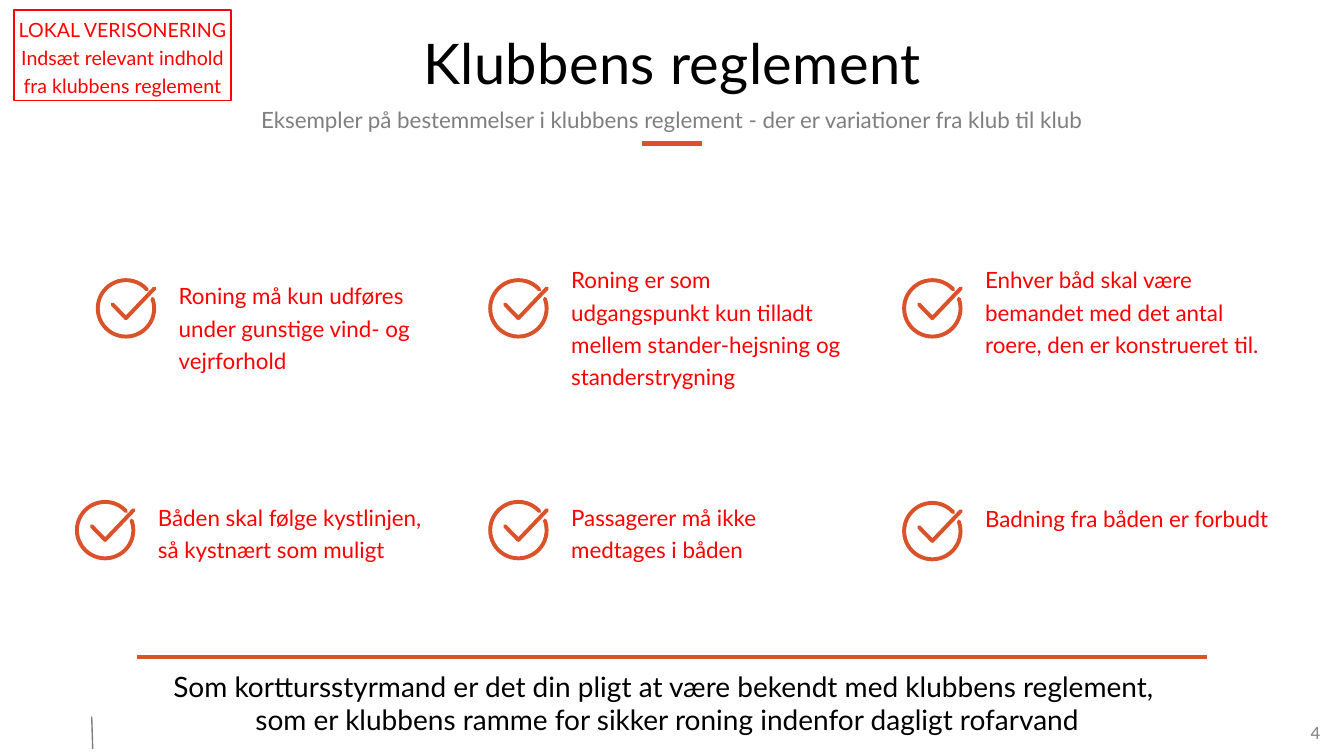
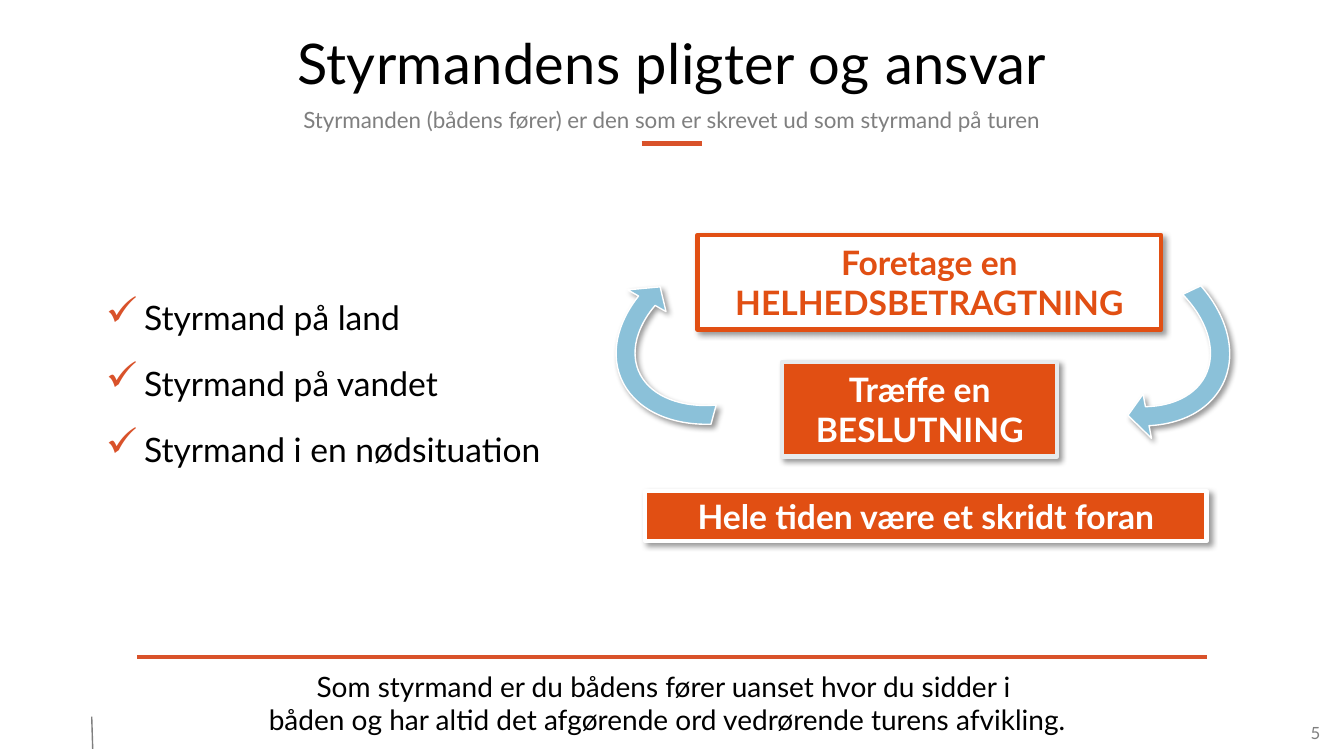
from dataclasses import dataclass
from typing import Optional, Sequence

from lxml.etree import SubElement
from pptx import Presentation
from pptx.dml.color import RGBColor
from pptx.enum.shapes import MSO_CONNECTOR, MSO_SHAPE
from pptx.enum.text import MSO_ANCHOR as Anchor, PP_ALIGN as Align
from pptx.oxml.ns import qn
from pptx.util import Emu, Inches, Pt

COLUMNS, ROWS = 40, 22.5
CELL = Inches(13.333) / COLUMNS


@dataclass(frozen=True)
class Theme:
    font: str = "Lato"
    black: str = "000000"
    white: str = "FFFFFF"
    gray: str = "7F7F7F"
    red: str = "FF0000"
    accent: str = "D9522A"
    orange: str = "E14F13"
    pale: str = "E7EBED"
    blue: str = "8BC1D9"
    title: int = 40
    large: int = 24
    closing: int = 20
    body: int = 16
    note: int = 14
    number: int = 12


THEME = Theme()


@dataclass(frozen=True)
class Area:
    """A rectangle in grid columns and rows."""
    left: float
    top: float
    width: float
    height: float

    def emu(self) -> tuple:
        return tuple(cells(v) for v in (self.left, self.top, self.width, self.height))


@dataclass(frozen=True)
class Style:
    size: int
    color: str
    bold: bool = False
    align: Align = Align.LEFT
    line_spacing: Optional[float] = None
    tracking: Optional[int] = None
    before: int = 0
    bullet: Optional[str] = None


@dataclass(frozen=True)
class Rule:
    left: float
    top: float
    text_top: float
    text: str


@dataclass(frozen=True)
class Panel:
    area: Area
    fill: str
    border: str
    color: str
    lines: tuple


@dataclass(frozen=True)
class Arrow:
    area: Area
    rotation: float
    head: float
    tail: float


TITLE = Style(THEME.title, THEME.black, align=Align.CENTER, line_spacing=0.9, tracking=30)
SUBTITLE = Style(THEME.body, THEME.gray, align=Align.CENTER, line_spacing=1.4)
CLOSING = Style(THEME.closing, THEME.black, align=Align.CENTER)
NUMBER = Style(THEME.number, THEME.gray, align=Align.RIGHT)
NOTE = Style(THEME.note, THEME.red, align=Align.CENTER, line_spacing=1.2)
RULE = Style(THEME.body, THEME.red, line_spacing=1.2)
DUTY = Style(THEME.large, THEME.black, before=18, bullet="✓")

ICON_RADIUS = 0.84
ICON_CENTER = 0.87
ICON_WEIGHT = 2.8
ARC_DEGREE = 0.6
TEXT_OFFSET = 2.44
TEXT_WIDTH = 8.43
LEFT, MIDDLE, RIGHT = 2.88, 14.56, 26.88
UPPER, LOWER = 8.31, 14.91

RULES = (
    Rule(LEFT, UPPER, 8.25, "Roning må kun udføres under gunstige vind- og vejrforhold"),
    Rule(MIDDLE, UPPER, 7.77, "Roning er som udgangspunkt kun tilladt mellem "
         "stander-hejsning og standerstrygning"),
    Rule(RIGHT, UPPER, 7.77, "Enhver båd skal være bemandet med det antal roere, "
         "den er konstrueret til."),
    Rule(2.26, LOWER, 14.85, "Båden skal følge kystlinjen, så kystnært som muligt"),
    Rule(MIDDLE, LOWER, 14.85, "Passagerer må ikke medtages i båden"),
    Rule(RIGHT, LOWER + 0.03, 14.88, "Badning fra båden er forbudt"),
)
DUTIES = ("Styrmand på land", "Styrmand på vandet", "Styrmand i en nødsituation")
PANELS = (
    Panel(Area(20.76, 6.99, 13.8, 2.82), THEME.white, THEME.orange, THEME.orange,
          ("Foretage en", "HELHEDSBETRAGTNING")),
    Panel(Area(23.28, 10.77, 8.19, 2.82), THEME.orange, THEME.pale, THEME.white,
          ("Træffe en", "BESLUTNING")),
    Panel(Area(19.2, 14.61, 16.71, 1.5), THEME.orange, THEME.white, THEME.white,
          ("Hele tiden være et skridt foran",)),
)
ARROWS = (
    Arrow(Area(18.93, 5.73, 5.97, 8.19), 67.3, 78.5, 22.65),
    Arrow(Area(30.03, 5.67, 6.09, 8.19), 117, 186.5, 130.65),
)


def cells(value: float) -> Emu:
    return Emu(round(value * CELL))


def rgb(color: str) -> RGBColor:
    return RGBColor.from_string(color)


def add_bullet(para, mark: str) -> None:
    props = para._p.get_or_add_pPr()
    indent = Inches(0.38)
    props.set("marL", str(indent))
    props.set("indent", str(-indent))
    SubElement(SubElement(props, qn("a:buClr")), qn("a:srgbClr")).set("val", THEME.accent)
    SubElement(props, qn("a:buSzPct")).set("val", "120000")
    SubElement(props, qn("a:buChar")).set("char", mark)


def write(frame, lines: Sequence[str], style: Style) -> None:
    frame.word_wrap = True
    for index, line in enumerate(lines):
        para = frame.add_paragraph() if index else frame.paragraphs[0]
        if style.bullet:
            add_bullet(para, style.bullet)
        para.alignment = style.align
        if style.line_spacing:
            para.line_spacing = style.line_spacing
        if index and style.before:
            para.space_before = Pt(style.before)
        span = para.add_run()
        span.text = line
        span.font.name = THEME.font
        span.font.size = Pt(style.size)
        span.font.bold = style.bold
        span.font.color.rgb = rgb(style.color)
        if style.tracking:
            span._r.get_or_add_rPr().set("spc", str(style.tracking))


def clear_insets(frame) -> None:
    frame.margin_left = frame.margin_right = frame.margin_top = frame.margin_bottom = 0


def add_text(page, area: Area, lines: Sequence[str], style: Style,
             inset: bool = False) -> None:
    box = page.shapes.add_textbox(*area.emu())
    if not inset:
        clear_insets(box.text_frame)
    write(box.text_frame, lines, style)


def add_line(page, start: tuple, end: tuple, color: str, width: float) -> None:
    line = page.shapes.add_connector(
        MSO_CONNECTOR.STRAIGHT, *(cells(v) for v in start + end))
    line.line.color.rgb = rgb(color)
    line.line.width = Pt(width)
    SubElement(line._element.spPr, qn("a:effectLst"))


def paint(shape, fill: Optional[str], border: str, width: float) -> None:
    shape.shadow.inherit = False
    if fill:
        shape.fill.solid()
        shape.fill.fore_color.rgb = rgb(fill)
    else:
        shape.fill.background()
    shape.line.color.rgb = rgb(border)
    shape.line.width = Pt(width)


def add_preset(page, kind, area: Area, fill: Optional[str], border: str, width: float):
    shape = page.shapes.add_shape(kind, *area.emu())
    paint(shape, fill, border, width)
    return shape


def cast_shadow(shape) -> None:
    effects = shape._element.spPr.find(qn("a:effectLst"))
    shadow = SubElement(effects, qn("a:outerShdw"), blurRad=str(Pt(4)), dist=str(Pt(3)),
                        dir=str(45 * 60000), algn="tl", rotWithShape="0")
    color = SubElement(shadow, qn("a:srgbClr"), val=THEME.black)
    SubElement(color, qn("a:alpha"), val="40000")


def add_check_icon(page, left: float, top: float) -> None:
    """Draw an open ring with a check mark leaving through its gap."""
    inset = ICON_CENTER - ICON_RADIUS
    ring = add_preset(page, MSO_SHAPE.ARC,
                      Area(left + inset, top + inset, 2 * ICON_RADIUS, 2 * ICON_RADIUS),
                      None, THEME.accent, ICON_WEIGHT)
    ring.adjustments[0] = 340 * ARC_DEGREE
    ring.adjustments[1] = 318 * ARC_DEGREE

    start, *rest = [(cells(left + ICON_CENTER + x), cells(top + ICON_CENTER + y))
                    for x, y in ((-0.4, -0.12), (0, 0.29), (0.85, -0.6))]
    builder = page.shapes.build_freeform(*start)
    builder.add_line_segments(rest, close=False)
    check = builder.convert_to_shape()
    paint(check, None, THEME.accent, ICON_WEIGHT)
    for stroke in (ring, check):
        stroke._element.spPr.find(qn("a:ln")).set("cap", "rnd")


def add_page(deck, number: int, title: str, subtitle: str, closing: Sequence[str]):
    """Add a slide with the frame that all slides share."""
    page = deck.slides.add_slide(deck.slide_layouts[6])
    add_line(page, (2.73, 21.33), (2.76, 22.29), THEME.gray, 1)
    add_text(page, Area(38.16, 21.51, 1.14, 0.6), [str(number)], NUMBER)
    add_text(page, Area(1.83, 0.93, 36.36, 2.13), [title], TITLE, inset=True)
    add_text(page, Area(1.83, 2.7, 36.33, 1.32), [subtitle], SUBTITLE, inset=True)
    add_line(page, (19.1, 4.27), (20.9, 4.27), THEME.accent, 3)
    add_text(page, Area(3.81, 19.77, 32.1, 2.31), closing, CLOSING, inset=True)
    add_line(page, (4.08, 19.56), (35.92, 19.56), THEME.accent, 3)
    return page


def add_regulations(deck) -> None:
    page = add_page(
        deck, 4, "Klubbens reglement",
        "Eksempler på bestemmelser i klubbens reglement - der er variationer fra klub til klub",
        ("Som korttursstyrmand er det din pligt at være bekendt med klubbens reglement, ",
         "som er klubbens ramme for sikker roning indenfor dagligt rofarvand"))
    note = add_preset(page, MSO_SHAPE.RECTANGLE, Area(0.42, 0.3, 6.45, 2.7),
                      None, THEME.red, 1)
    clear_insets(note.text_frame)
    note.text_frame.vertical_anchor = Anchor.MIDDLE
    write(note.text_frame,
          ("LOKAL VERISONERING", "Indsæt relevant indhold fra klubbens reglement"), NOTE)
    for rule in RULES:
        add_check_icon(page, rule.left, rule.top)
        add_text(page, Area(rule.left + TEXT_OFFSET, rule.text_top, TEXT_WIDTH, 1.86),
                 [rule.text], RULE)


def add_duties(deck) -> None:
    page = add_page(
        deck, 5, "Styrmandens pligter og ansvar",
        "Styrmanden (bådens fører) er den som er skrevet ud som styrmand på turen",
        ("Som styrmand er du bådens fører uanset hvor du sidder i ",
         "båden og har altid det afgørende ord vedrørende turens afvikling."))
    add_text(page, Area(3.15, 8.85, 13.44, 5.16), DUTIES, DUTY)
    for panel in PANELS:
        shape = add_preset(page, MSO_SHAPE.RECTANGLE, panel.area, panel.fill, panel.border, 3)
        cast_shadow(shape)
        write(shape.text_frame, panel.lines,
              Style(THEME.large, panel.color, bold=True, align=Align.CENTER))
    for arrow in ARROWS:
        shape = add_preset(page, MSO_SHAPE.CIRCULAR_ARROW, arrow.area,
                           THEME.blue, THEME.white, 1)
        cast_shadow(shape)
        shape.rotation = arrow.rotation
        for index, value in enumerate((0.095, 6.85, arrow.head, arrow.tail, 0.11)):
            shape.adjustments[index] = value


def main() -> None:
    deck = Presentation()
    deck.slide_width, deck.slide_height = cells(COLUMNS), cells(ROWS)
    add_regulations(deck)
    add_duties(deck)
    deck.save("out.pptx")


if __name__ == "__main__":
    main()
